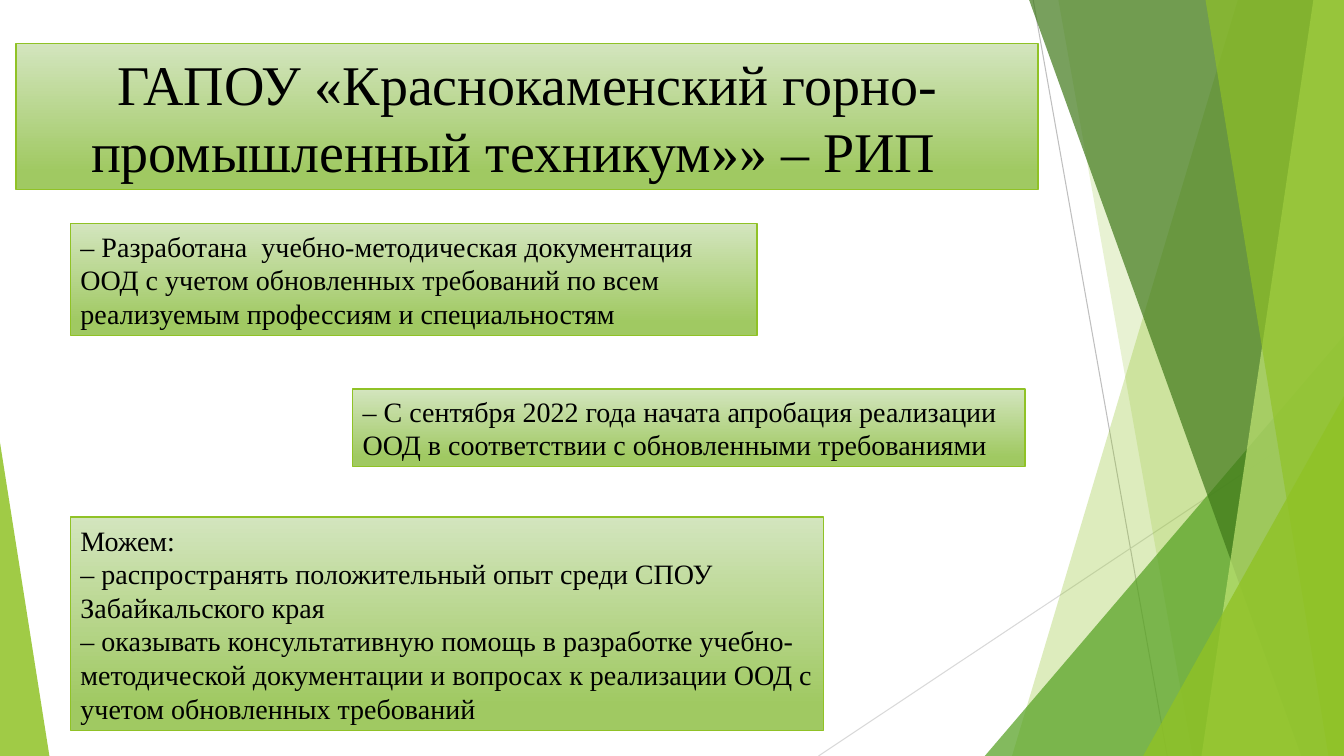
from dataclasses import dataclass
from typing import Union

from lxml import etree
from pptx import Presentation
from pptx import util as u
from pptx.dml import color
from pptx.enum import shapes, text
from pptx.oxml import ns

WIDTH, HEIGHT = 960, 540


@dataclass(frozen=True)
class Theme:
    lime: str = "90C226"
    pale_lime: str = "C0E474"
    green: str = "54A021"
    dark_green: str = "3F7819"
    panel_top: str = "D3E5BE"
    panel_bottom: str = "A0C962"
    steep_ray: str = "BFBFBF"
    flat_ray: str = "D9D9D9"
    ink: str = "000000"
    font: str = "Times New Roman"
    title_size: float = 40
    body_size: float = 20
    ray_width: float = 0.75
    border_width: float = 1


@dataclass(frozen=True)
class Ray:
    x1: float
    y1: float
    x2: float
    y2: float
    color: str


@dataclass(frozen=True)
class Shard:
    top_x: float
    bottom_x: float
    color: str
    opacity: int


@dataclass(frozen=True)
class Corner:
    left: float
    top: float
    width: float
    apex: float
    color: str
    opacity: int


@dataclass(frozen=True)
class Panel:
    left: float
    top: float
    width: float
    height: float
    size: float
    align: text.PP_ALIGN
    lines: tuple[str, ...]


THEME = Theme()
LEFT, CENTER = text.PP_ALIGN.LEFT, text.PP_ALIGN.CENTER

RAYS = (
    Ray(738, 0, 833.76, HEIGHT, THEME.steep_ray),
    Ray(WIDTH, 290.16, 584.64, HEIGHT, THEME.flat_ray),
)

FACETS: tuple[Union[Shard, Corner], ...] = (
    Shard(884.16, 722.88, THEME.lime, 30),
    Shard(756, 851.76, THEME.lime, 20),
    Corner(703.44, 239.76, 256.56, 1, THEME.green, 72),
    Shard(735.12, 929.52, THEME.dark_green, 70),
    Shard(938.16, 858.24, THEME.pale_lime, 70),
    Shard(861.12, 948.96, THEME.lime, 65),
    Corner(816.48, 282.96, 143.52, 1, THEME.lime, 80),
    Corner(0, 316.08, 35.28, 0, THEME.lime, 85),
)

PANELS = (
    Panel(11.52, 30.96, 730.08, 104.4, THEME.title_size, CENTER, (
        "ГАПОУ «Краснокаменский горно-промышленный техникум»» – РИП  ",
    )),
    Panel(50.4, 159.84, 490.32, 79.92, THEME.body_size, LEFT, (
        "– Разработана  учебно-методическая документация ООД с учетом "
        "обновленных требований по всем реализуемым профессиям и специальностям",
    )),
    Panel(252, 277.92, 480.24, 55.44, THEME.body_size, LEFT, (
        "– С сентября 2022 года начата апробация реализации ООД "
        "в соответствии с обновленными требованиями",
    )),
    Panel(50.4, 369.36, 537.84, 152.64, THEME.body_size, LEFT, (
        "Можем:",
        "– распространять положительный опыт среди СПОУ Забайкальского края",
        "– оказывать консультативную помощь в разработке учебно-методической "
        "документации и вопросах к реализации ООД с учетом обновленных требований",
    )),
)


def rgb(value: str) -> color.RGBColor:
    return color.RGBColor.from_string(value)


def draw_ray(slide, ray: Ray) -> None:
    ends = (u.Pt(v) for v in (ray.x1, ray.y1, ray.x2, ray.y2))
    cxn = slide.shapes.add_connector(shapes.MSO_CONNECTOR.STRAIGHT, *ends)
    cxn.line.color.rgb = rgb(ray.color)
    cxn.line.width = u.Pt(THEME.ray_width)
    etree.SubElement(cxn.element.spPr, ns.qn("a:effectLst"))


def add_shard(slide, shard: Shard):
    outline = slide.shapes.build_freeform(u.Pt(shard.top_x), 0)
    corners = ((WIDTH, 0), (WIDTH, HEIGHT), (shard.bottom_x, HEIGHT))
    outline.add_line_segments([(u.Pt(x), u.Pt(y)) for x, y in corners], close=True)
    return outline.convert_to_shape()


def add_corner(slide, corner: Corner):
    sp = slide.shapes.add_shape(
        shapes.MSO_SHAPE.ISOSCELES_TRIANGLE, u.Pt(corner.left), u.Pt(corner.top),
        u.Pt(corner.width), u.Pt(HEIGHT - corner.top))
    sp.adjustments[0] = corner.apex
    return sp


def draw_facet(slide, facet: Union[Shard, Corner]) -> None:
    add = add_shard if isinstance(facet, Shard) else add_corner
    sp = add(slide, facet)
    sp.shadow.inherit = False
    sp.line.fill.background()
    sp.fill.solid()
    sp.fill.fore_color.rgb = rgb(facet.color)
    tint = sp.element.spPr.find(ns.qn("a:solidFill"))[0]
    etree.SubElement(tint, ns.qn("a:alpha"), val=str(facet.opacity * 1000))


def draw_panel(slide, panel: Panel) -> None:
    box = (u.Pt(v) for v in (panel.left, panel.top, panel.width, panel.height))
    sp = slide.shapes.add_shape(shapes.MSO_SHAPE.RECTANGLE, *box)
    sp.shadow.inherit = False
    sp.line.color.rgb = rgb(THEME.lime)
    sp.line.width = u.Pt(THEME.border_width)
    sp.fill.gradient()
    sp.fill.gradient_angle = 270
    stops = ((0, THEME.panel_top), (0.88, THEME.panel_bottom))
    for stop, (position, tint) in zip(sp.fill.gradient_stops, stops):
        stop.position = position
        stop.color.rgb = rgb(tint)

    tf = sp.text_frame
    tf.word_wrap = True
    tf.auto_size = text.MSO_AUTO_SIZE.SHAPE_TO_FIT_TEXT
    for i, line in enumerate(panel.lines):
        p = tf.add_paragraph() if i else tf.paragraphs[0]
        p.alignment = panel.align
        r = p.add_run()
        r.text = line
        r.font.name = THEME.font
        r.font.size = u.Pt(panel.size)
        r.font.color.rgb = rgb(THEME.ink)


def main() -> None:
    prs = Presentation()
    prs.slide_width, prs.slide_height = u.Pt(WIDTH), u.Pt(HEIGHT)
    slide = prs.slides.add_slide(prs.slide_layouts[6])
    for ray in RAYS:
        draw_ray(slide, ray)
    for facet in FACETS:
        draw_facet(slide, facet)
    for panel in PANELS:
        draw_panel(slide, panel)
    prs.save("out.pptx")


if __name__ == "__main__":
    main()
